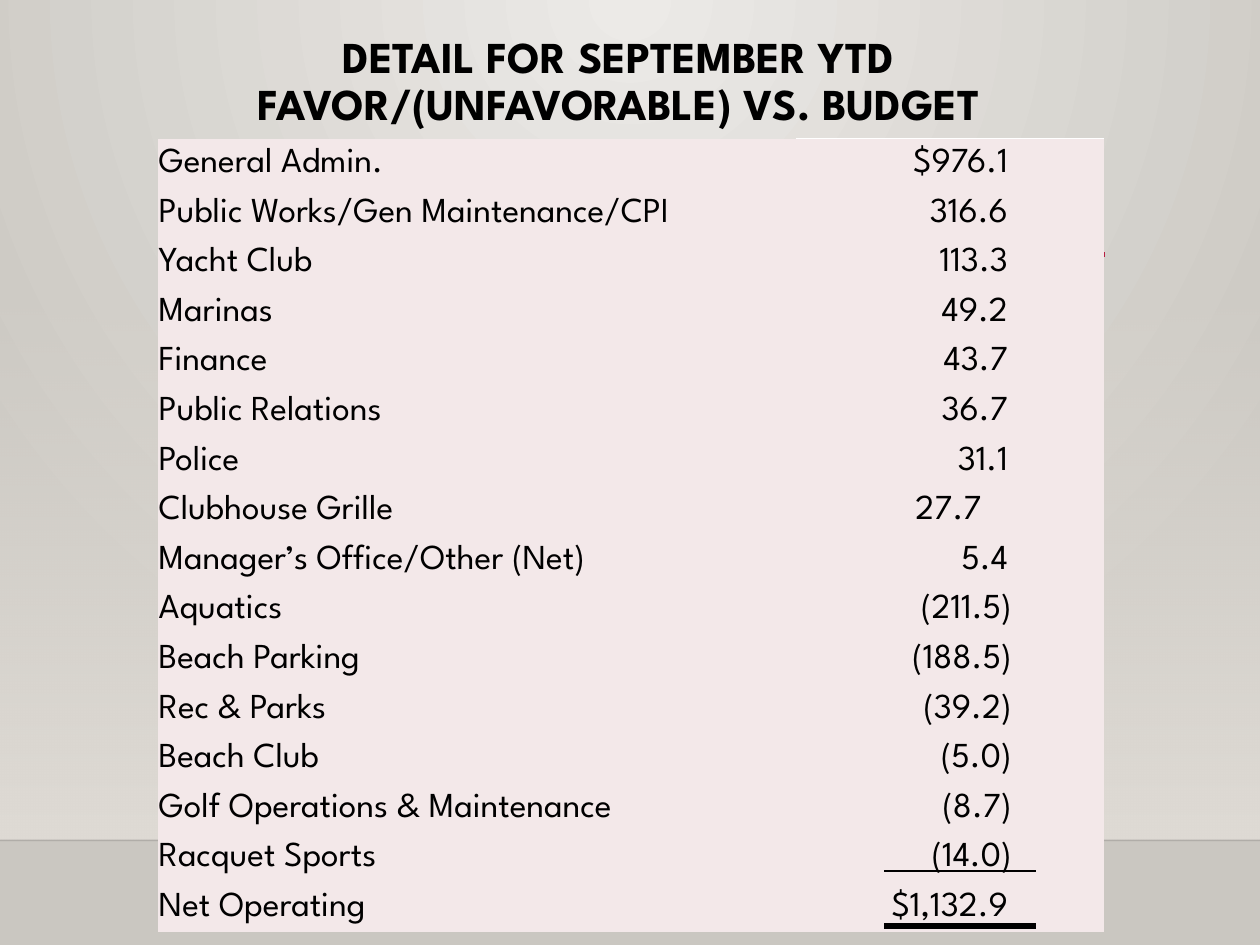
import pptx
import pptx.util
import pptx.dml.color
import pptx.enum.shapes
import pptx.enum.text
from lxml import etree
from pptx.oxml.ns import qn
from pptx.util import Inches, Pt

HUES = {"ink": "000000", "cell": "F3E8E9", "edge": "FFFFFF", "rule": "B71E42",
        "glow": "ECEAE7", "dusk": "CAC7C1", "wall": "DFDBD5"}
FACE = "League Spartan"
ALIGN = pptx.enum.text.PP_ALIGN
ANCHOR = pptx.enum.text.MSO_ANCHOR

# Area, amount
ROWS = [
    ("General Admin.", "$976.1"),
    ("Public Works/Gen Maintenance/CPI", "316.6"),
    ("Yacht Club", "113.3"),
    ("Marinas", "49.2"),
    ("Finance", "43.7"),
    ("Public Relations", "36.7"),
    ("Police", "31.1"),
    ("Clubhouse Grille", "27.7"),
    ("Manager’s Office/Other (Net)", "5.4"),
    ("Aquatics", "(211.5)"),
    ("Beach Parking", "(188.5)"),
    ("Rec & Parks", "(39.2)"),
    ("Beach Club", "(5.0)"),
    ("Golf Operations & Maintenance", "(8.7)"),
    ("Racquet Sports", "(14.0)"),
    ("Net Operating", "$1,132.9"),
]
INDENT = {"27.7": 0.97}


def hue(name):
    return pptx.dml.color.RGBColor.from_string(HUES[name])


def put(item, **values):
    for key, value in values.items():
        setattr(item, key, value)


def add(parent, tag, **attrs):
    return etree.SubElement(parent, qn(tag), attrs)


def style(para, size, align, bold=False):
    para.alignment = align
    for run in para.runs:
        put(run.font, name=FACE, size=Pt(size), bold=bold)
        run.font.color.rgb = hue("ink")


def blend(fill, first, last):
    fill.gradient()
    for stop, name in zip(fill.gradient_stops, (first, last)):
        stop.color.rgb = hue(name)


def line(slide, left, top, width, name, weight, alpha=None):
    rule = slide.shapes.add_connector(
        pptx.enum.shapes.MSO_CONNECTOR.STRAIGHT,
        Inches(left), Inches(top), Inches(left + width), Inches(top))
    rule.line.width = Pt(weight)
    rule.line.color.rgb = hue(name)
    props = rule.element.spPr
    add(props, "a:effectLst")
    if alpha:
        add(props.find(".//" + qn("a:srgbClr")), "a:alpha", val=str(alpha * 1000))


def room(slide, width, top, floor):
    # Glow from the top centre
    blend(slide.background.fill, "glow", "dusk")
    grad = slide.element.find(".//" + qn("a:gradFill"))
    grad.remove(grad.find(qn("a:lin")))
    path = add(grad, "a:path", path="circle")
    add(path, "a:fillToRect", l="43000", t="0", r="43000", b="100000")

    # Wall that fades in towards the floor line
    wall = slide.shapes.add_shape(
        pptx.enum.shapes.MSO_SHAPE.RECTANGLE,
        0, Inches(top), Inches(width), Inches(floor - top))
    wall.shadow.inherit = False
    wall.line.fill.background()
    blend(wall.fill, "wall", "wall")
    wall.fill.gradient_angle = 270
    add(wall.element.spPr.find(".//" + qn("a:srgbClr")), "a:alpha", val="0")
    line(slide, 0, floor, width, "ink", 1, alpha=20)
    line(slide, 1.58, 2.02, 7.19, "rule", 2.5)


def heading(slide, left, top, width, height):
    title = slide.shapes.title
    put(title, left=Inches(left), top=Inches(top),
        width=Inches(width), height=Inches(height))
    frame = title.text_frame
    frame.text = "DETAIL FOR SEPTEMBER YTD\vFAVOR/(UNFAVORABLE) VS. BUDGET"
    put(frame, word_wrap=True, vertical_anchor=ANCHOR.TOP,
        auto_size=pptx.enum.text.MSO_AUTO_SIZE.NONE)
    para = frame.paragraphs[0]
    para.line_spacing = 0.9
    style(para, 25.2, ALIGN.CENTER, bold=True)


def ledger(slide, left, top, widths, height):
    table = slide.shapes.add_table(
        len(ROWS), 2, Inches(left), Inches(top),
        Inches(sum(widths)), Inches(height)).table
    put(table, first_row=False, horz_banding=False)
    # Plain style without grid lines
    mark = table._tbl.tblPr.find(qn("a:tableStyleId"))
    mark.text = "{2D5ABB26-0587-4C30-8999-92F81FD0307C}"
    for col, width in zip(table.columns, widths):
        col.width = Inches(width)
    for r, texts in enumerate(ROWS):
        table.rows[r].height = Inches(height / len(ROWS))
        for c, text in enumerate(texts):
            cell = table.cell(r, c)
            # Amounts line up on the digit, with brackets hanging out
            inset = INDENT.get(text, 0.73 if text.endswith(")") else 0.76)
            put(cell, text=text, vertical_anchor=ANCHOR.MIDDLE,
                margin_left=Inches(0.01), margin_top=Inches(0.01),
                margin_right=Inches(inset if c else 0.01), margin_bottom=0)
            style(cell.text_frame.paragraphs[0], 20,
                  ALIGN.RIGHT if c else ALIGN.LEFT)
            if (r, c) == (0, 1):
                edge = add(cell._tc.get_or_add_tcPr(), "a:lnT", w="12700")
                add(add(edge, "a:solidFill"), "a:srgbClr", val=HUES["edge"])
            cell.fill.solid()
            cell.fill.fore_color.rgb = hue("cell")


def totals(slide, left, width):
    line(slide, left, 7.35, width, "ink", 3)
    line(slide, left, 6.91, width, "ink", 1.25)


def main():
    deck = pptx.Presentation()
    put(deck, slide_width=Inches(10), slide_height=Inches(7.5))
    slide = deck.slides.add_slide(deck.slide_layouts[5])
    room(slide, 10, 2.2, 6.67)
    heading(slide, 0.81, 0.23, 8.2, 1.34)
    ledger(slide, 1.25, 1.1, (5.07, 2.44), 6.3)
    totals(slide, 7.02, 1.2)
    deck.save("out.pptx")


if __name__ == "__main__":
    main()
